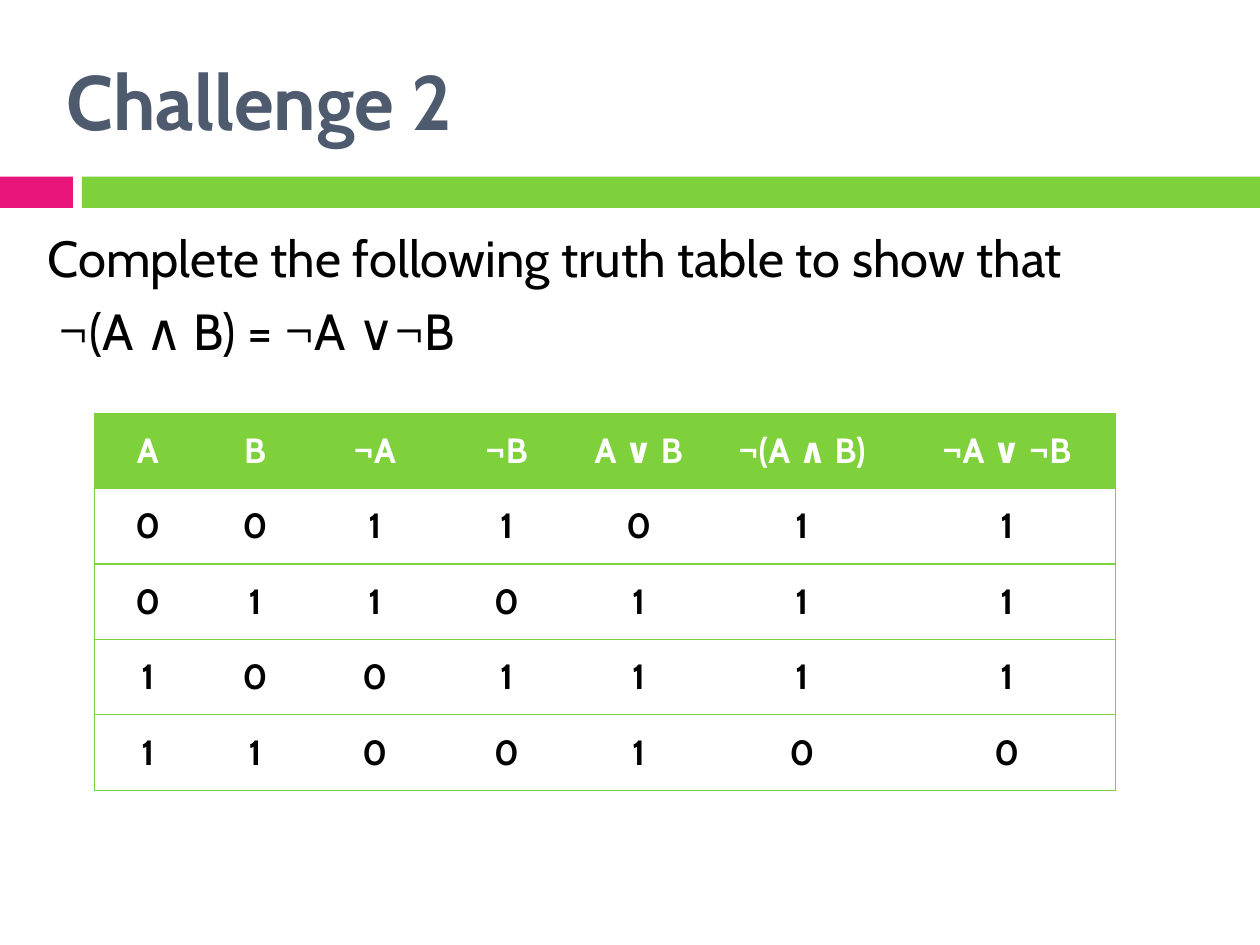
from dataclasses import dataclass

from lxml import etree
from pptx import Presentation
from pptx.dml.color import RGBColor
from pptx.enum.shapes import MSO_SHAPE
from pptx.enum.text import MSO_ANCHOR, PP_ALIGN
from pptx.oxml.ns import qn
from pptx.util import Cm, Pt

RECT = MSO_SHAPE.RECTANGLE
TOP, MIDDLE = MSO_ANCHOR.TOP, MSO_ANCHOR.MIDDLE
LEFT, CENTER = PP_ALIGN.LEFT, PP_ALIGN.CENTER


@dataclass(frozen=True)
class Theme:
    font: str = "Cabin"
    green: str = "7FD13B"
    pink: str = "EA157A"
    slate: str = "4E5B6F"
    black: str = "000000"
    white: str = "FFFFFF"
    title: int = 44
    body: int = 29
    cell: int = 20
    rule: float = 0.79


THEME = Theme()

HEADER = ["A", "B", "¬A", "¬B", "A ∨ B", "¬(A ∧ B)", "¬A ∨ ¬B"]
TRUTH = ["0011011", "0110111", "1001111", "1100100"]
COLUMNS = [2.16, 2.16, 2.67, 2.64, 2.69, 3.89, 4.37]
ROW_HEIGHT = 1.52


def write(tf, lines, size, color, bold=False, align=LEFT, before=0):
    for i, line in enumerate(lines):
        p = tf.paragraphs[0] if i == 0 else tf.add_paragraph()
        p.alignment = align
        p.space_before = Pt(before)
        r = p.add_run()
        r.text = line
        r.font.name = THEME.font
        r.font.size = Pt(size)
        r.font.bold = bold
        r.font.color.rgb = RGBColor.from_string(color)


class Deck:
    def __init__(self, theme):
        self.theme = theme
        self.prs = Presentation()
        self.prs.slide_width, self.prs.slide_height = Cm(25.4), Cm(19.05)
        self.s = self.prs.slides.add_slide(self.prs.slide_layouts[6])

    def bar(self, x, y, w, h, color):
        sp = self.s.shapes.add_shape(RECT, Cm(x), Cm(y), Cm(w), Cm(h))
        sp.shadow.inherit = False
        sp.fill.solid()
        sp.fill.fore_color.rgb = RGBColor.from_string(color)
        sp.line.fill.background()

    def text(self, x, y, w, h, lines, anchor=TOP, **style):
        tf = self.s.shapes.add_textbox(Cm(x), Cm(y), Cm(w), Cm(h)).text_frame
        tf.word_wrap = True
        tf.vertical_anchor = anchor
        write(tf, lines, **style)

    def border(self, cell, side, visible):
        width = str(Pt(self.theme.rule))
        ln = etree.SubElement(cell._tc.get_or_add_tcPr(), qn(f"a:ln{side}"), w=width)
        if visible:
            fill = etree.SubElement(ln, qn("a:solidFill"))
            etree.SubElement(fill, qn("a:srgbClr"), val=self.theme.green)
        else:
            etree.SubElement(ln, qn("a:noFill"))

    def table(self, x, y, widths, row_height, rows):
        t, last = self.theme, len(widths) - 1
        frame = self.s.shapes.add_table(len(rows), len(widths), Cm(x), Cm(y),
                                        Cm(sum(widths)), Cm(row_height * len(rows)))
        table = frame.table
        table.horz_banding = False
        for column, width in zip(table.columns, widths):
            column.width = Cm(width)
        for i, row in enumerate(rows):
            table.rows[i].height = Cm(row_height)
            for j, value in enumerate(row):
                cell = table.cell(i, j)
                sides = {"L": j == 0, "R": j == last, "T": True, "B": True}
                for side, visible in sides.items():
                    self.border(cell, side, visible)
                if i == 0:
                    cell.fill.solid()
                    cell.fill.fore_color.rgb = RGBColor.from_string(t.green)
                else:
                    cell.fill.background()
                cell.vertical_anchor = MIDDLE
                cell.margin_left = cell.margin_right = Cm(0.18)
                cell.margin_top = cell.margin_bottom = 0
                write(cell.text_frame, [value], t.cell, t.black if i else t.white,
                      bold=True, align=CENTER)


def main():
    deck = Deck(THEME)
    deck.bar(0, 3.56, 1.47, 0.63, THEME.pink)
    deck.bar(1.65, 3.56, 23.75, 0.63, THEME.green)
    deck.text(1.09, 0.64, 23.8, 2.74, ["Challenge 2"], anchor=MIDDLE,
              size=THEME.title, color=THEME.slate, bold=True)
    deck.text(0.71, 4.45, 24.2, 3.28,
              ["Complete the following truth table to show that", " ¬(A ∧ B) = ¬A ∨¬B"],
              size=THEME.body, color=THEME.black, before=7)
    deck.table(1.9, 8.33, COLUMNS, ROW_HEIGHT, [HEADER, *TRUTH])
    deck.prs.save("out.pptx")


if __name__ == "__main__":
    main()
